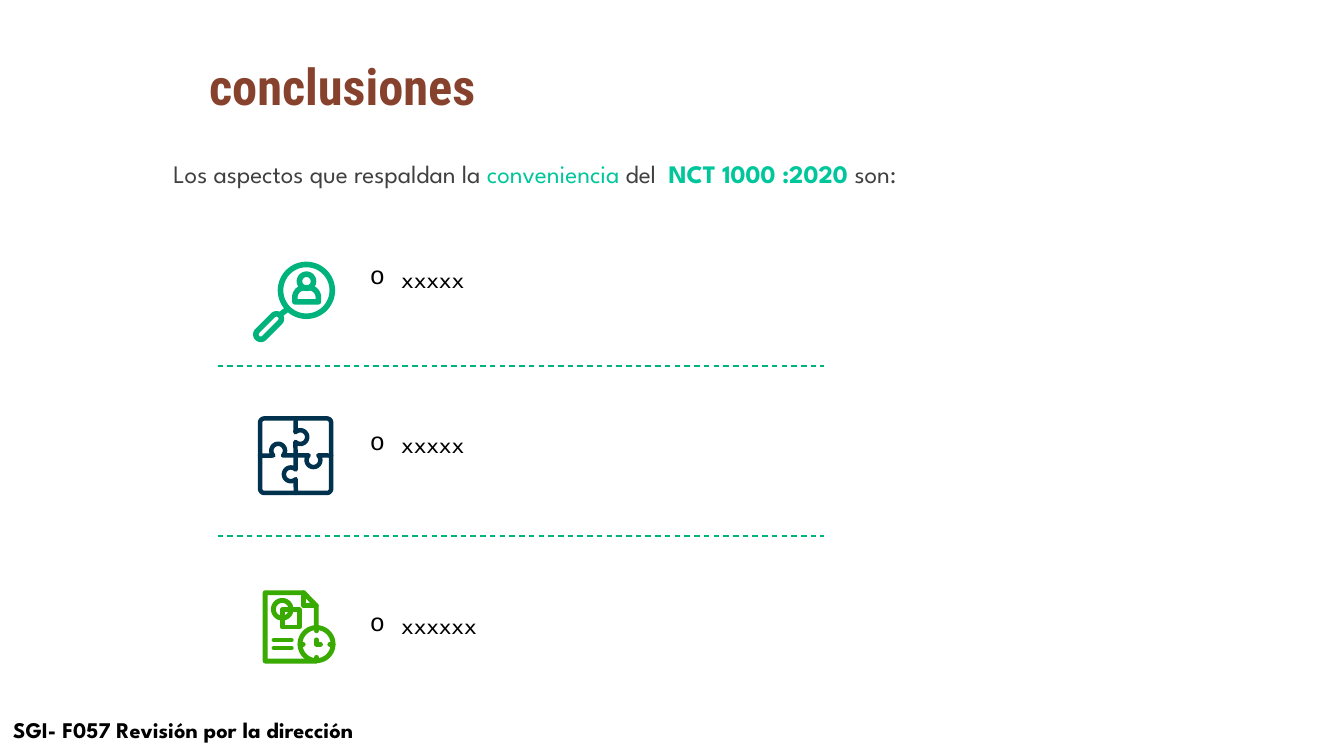
from math import cos, radians, sin

from lxml.etree import SubElement
from pptx import Presentation
from pptx.dml.color import RGBColor
from pptx.enum.dml import MSO_LINE
from pptx.enum.shapes import MSO_CONNECTOR
from pptx.enum.text import MSO_ANCHOR, PP_ALIGN
from pptx.oxml.ns import qn
from pptx.util import Pt

COLORS = {
    "title": "87422D",
    "body": "404040",
    "accent": "00C69B",
    "black": "000000",
    "green": "00B37C",
    "navy": "00324D",
    "leaf": "38AA00",
}
FONT = "League Spartan"


def color(name):
    return RGBColor.from_string(COLORS[name])


def add_text(s, runs, x, y, w, h, size=18, font=FONT, bold=False, fill="black",
             inset=None, anchor=MSO_ANCHOR.TOP, bullet=None):
    tf = s.shapes.add_textbox(Pt(x), Pt(y), Pt(w), Pt(h)).text_frame
    tf.word_wrap = True
    tf.vertical_anchor = anchor
    if inset is not None:
        tf.margin_left = tf.margin_right = tf.margin_top = tf.margin_bottom = Pt(inset)
    p = tf.paragraphs[0]
    if bullet:
        p.alignment = PP_ALIGN.JUSTIFY
        pPr = p._p.get_or_add_pPr()
        pPr.set("marL", str(Pt(22.5)))
        pPr.set("indent", str(-Pt(22.5)))
        bullet_font = SubElement(pPr, qn("a:buFont"))
        bullet_font.set("typeface", "Courier New")
        bullet_font.set("pitchFamily", "49")
        bullet_font.set("charset", "0")
        SubElement(pPr, qn("a:buChar")).set("char", bullet)
    for text, run_fill, run_bold in [(runs, fill, bold)] if isinstance(runs, str) else runs:
        r = p.add_run()
        r.text = text
        r.font.name = font
        r.font.size = Pt(size)
        r.font.bold = run_bold
        r.font.color.rgb = color(run_fill)


def stroke(s, box, lines, fill, width):
    x, y = box
    lines = [[(Pt(x + px), Pt(y + py)) for px, py in line] for line in lines]
    builder = s.shapes.build_freeform(*lines[0][0])
    for i, line in enumerate(lines):
        if i:
            builder.move_to(*line[0])
        builder.add_line_segments(line[1:], close=line[0] == line[-1])
    sp = builder.convert_to_shape()
    sp.shadow.inherit = False
    sp.fill.background()
    sp.line.color.rgb = color(fill)
    sp.line.width = Pt(width)
    ln = sp.line._get_or_add_ln()
    ln.set("cap", "rnd")
    SubElement(ln, qn("a:round"))


def arc(cx, cy, radius, start, end, steps=24):
    angles = [radians(start + (end - start) * i / steps) for i in range(steps + 1)]
    return [(cx + radius * cos(a), cy + radius * sin(a)) for a in angles]


def ring(cx, cy, radius):
    points = arc(cx, cy, radius, 0, 360, 60)
    return points[:-1] + points[:1]


def rounded(x, y, w, h, radius):
    left, top, right, bottom = x + radius, y + radius, x + w - radius, y + h - radius
    points = [*arc(left, top, radius, 180, 270), *arc(right, top, radius, 270, 360),
              *arc(right, bottom, radius, 0, 90), *arc(left, bottom, radius, 90, 180)]
    return points + points[:1]


def magnifier_icon(s, box):
    pen = ("green", 4)
    handle = [*arc(5.6, 51.7, 3.5, 45, 225), *arc(16.8, 40.5, 3.5, 225, 405)]
    neck = [(19.4, 37.6), (24.5, 33.8)]
    stroke(s, box, [ring(38.2, 20.2, 18.5), handle + handle[:1], neck], *pen)
    body = [(29.9, 28.4), *arc(36.8, 25.2, 6.9, 180, 270), *arc(39.8, 25.2, 6.9, 270, 360),
            (46.7, 28.4), (29.9, 28.4)]
    stroke(s, box, [ring(38.2, 13.7, 5), body], *pen)


def puzzle_icon(s, box):
    upright = [(27, 1.5), *arc(30.2, 14.8, 4.9, 225, 495), *arc(23.4, 41.4, 4.9, 315, 45), (27, 54.7)]
    level = [(1.5, 28), *arc(14.4, 24.5, 4.9, 135, 405), *arc(39.6, 31.3, 4.9, 225, -45), (52.2, 28)]
    stroke(s, box, [rounded(1.5, 1.5, 50.7, 53.2, 3), upright, level], "navy", 3.2)


def document_icon(s, box):
    pen = ("leaf", 3.5)
    page = [(38, 50.3), (1.5, 50.3), (1.5, 1.5), (29, 1.5), (38, 10.8), (38, 26)]
    fold = [(29, 1.5), (29, 10.8), (38, 10.8)]
    ticks = [[arc(38.2, 38.2, radius, a, a)[0] for radius in (11.8, 9.5)] for a in range(0, 360, 90)]
    square = [(13.7, 13.7), (25.9, 13.7), (25.9, 25.9), (13.7, 25.9), (13.7, 13.7)]
    stroke(s, box, [ring(13.7, 13.3, 6.3), square], *pen)
    stroke(s, box, [page, fold, ring(38.2, 38.2, 11.8), *ticks], *pen)
    stroke(s, box, [[(38.2, 35.2), (38.2, 38.2), (41, 38.2)]], *pen)
    for y in (35.3, 41):
        stroke(s, box, [[(7.9, y), (20.2, y)]], *pen)


def divider(s, x, y, w):
    line = s.shapes.add_connector(MSO_CONNECTOR.STRAIGHT, Pt(x), Pt(y), Pt(x + w), Pt(y))
    line.line.color.rgb = color("green")
    line.line.width = Pt(1)
    line.line.dash_style = MSO_LINE.DASH
    SubElement(line._element.spPr, qn("a:effectLst"))


def header(s, x, y):
    add_text(s, "conclusiones", x + 25.6, y, 662.4, 51, size=36, font="Roboto Condensed",
             bold=True, fill="title")
    add_text(s, [("Los aspectos que respaldan la ", "body", False),
                 ("conveniencia", "accent", False),
                 (" del  ", "body", False),
                 ("NCT 1000 :2020 ", "accent", True),
                 ("son:", "body", False)], x, y + 73.5, 621.4, 29)


def conclusion(s, x, y, w, text, icon, dx, dy):
    icon(s, (x + dx, y + dy))
    add_text(s, text, x + 101.7, y, w, 29, bullet="o")


def conclusions(s, x):
    rows = [(184.3, 481, "xxxxx", magnifier_icon, 25.2, 2.9),
            (302.4, 481, "xxxxx", puzzle_icon, 28.8, -5),
            (431.7, 470.2, "xxxxxx", document_icon, 32.4, -9.8)]
    for y, w, text, icon, dx, dy in rows:
        conclusion(s, x, y, w, text, icon, dx, dy)
    for y in (261.4, 383):
        divider(s, x, y, 433)


def footer(s, x, y):
    add_text(s, "SGI- F057 Revisión por la dirección", x, y, 345.6, 26.6, size=16, bold=True,
             inset=3.6, anchor=MSO_ANCHOR.BOTTOM)


def main():
    prs = Presentation()
    prs.slide_width, prs.slide_height = Pt(960), Pt(540)
    s = prs.slides.add_slide(prs.slide_layouts[6])
    header(s, 116.7, 35.9)
    conclusions(s, 155.5)
    footer(s, 5.8, 507.6)
    prs.save("out.pptx")


if __name__ == "__main__":
    main()
